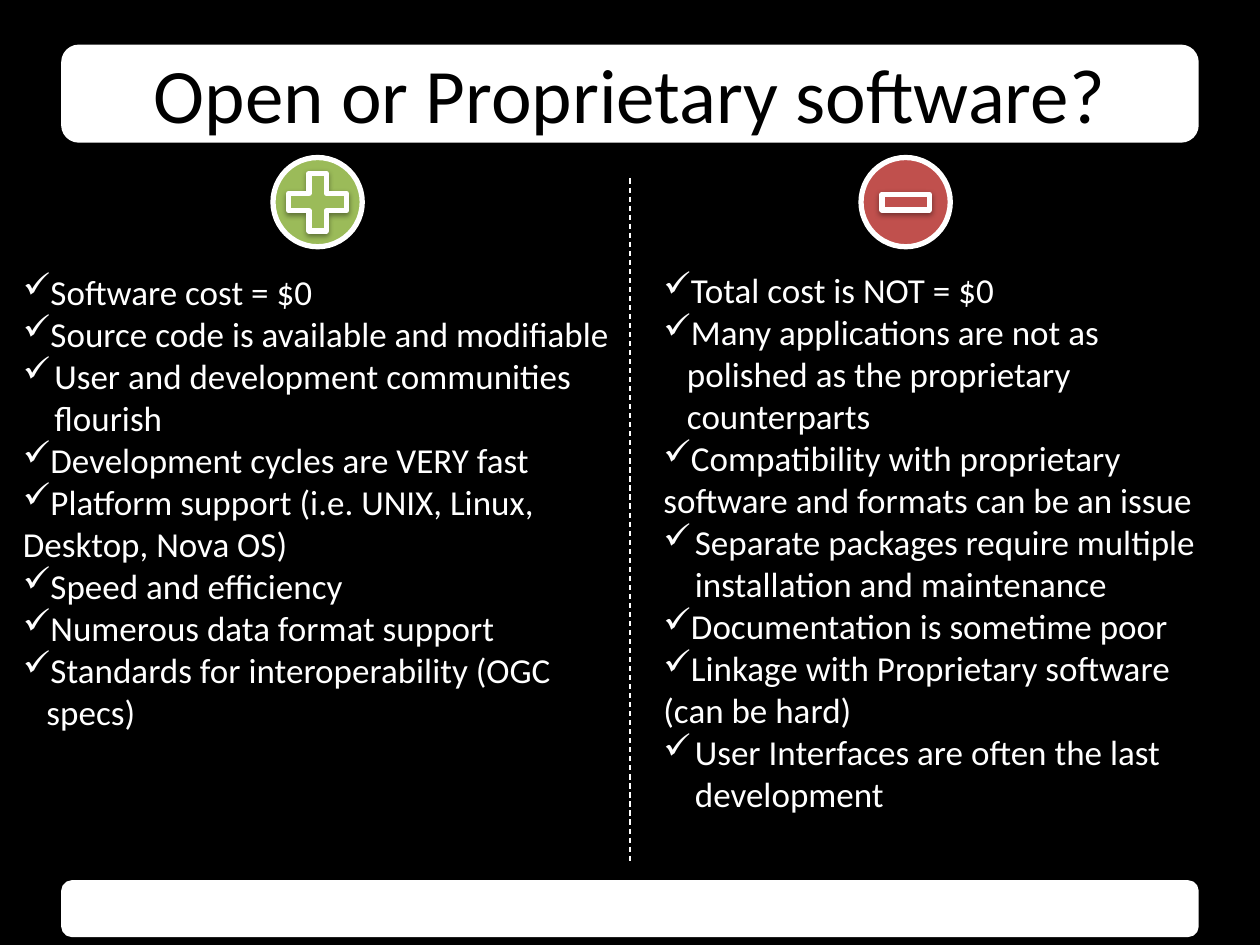
from dataclasses import dataclass

from pptx import Presentation
from pptx.dml.color import RGBColor
from pptx.enum.dml import MSO_LINE
from pptx.enum.shapes import MSO_CONNECTOR, MSO_SHAPE as Preset
from pptx.enum.text import MSO_ANCHOR as Anchor, PP_ALIGN as Align
from pptx.oxml.ns import qn
from pptx.oxml.xmlchemy import OxmlElement as new_element
from pptx.util import Pt


@dataclass(frozen=True)
class Theme:
    font: str = "Calibri"
    title_size: float = 44
    body_size: float = 20
    black: str = "000000"
    white: str = "FFFFFF"
    green: str = "9BBB59"
    red: str = "C0504D"


THEME = Theme()
CHECK = "✓"

# Each item is its lines and the hanging indent of the lines after the first
ADVANTAGES = [
    (["Software cost = $0"], 0),
    (["Source code is available and modifiable"], 0),
    (["User and development communities", "flourish"], 18),
    (["Development cycles are VERY fast"], 0),
    (["Platform support (i.e. UNIX, Linux, Desktop, Nova OS)"], 0),
    (["Speed and efficiency"], 0),
    (["Numerous data format support"], 0),
    (["Standards for interoperability (OGC", "specs)"], 13.5),
]
DRAWBACKS = [
    (["Total cost is NOT = $0"], 0),
    (["Many applications are not as", "polished as the proprietary",
      "counterparts"], 13.5),
    (["Compatibility with proprietary software and formats can be an issue"], 0),
    (["Separate packages require multiple", "installation and maintenance"], 18),
    (["Documentation is sometime poor"], 0),
    (["Linkage with Proprietary software (can be hard)"], 0),
    (["User Interfaces are often the last", "development"], 18),
]


def color(value):
    return RGBColor.from_string(value)


def points(*lengths):
    return [Pt(length) for length in lengths]


def add_child(parent, tag, **attributes):
    child = new_element(tag)
    for name, value in attributes.items():
        child.set(name, str(value))
    parent.append(child)
    return child


def add_panel(shapes, preset, box, fill, line_width):
    shape = shapes.add_shape(preset, *points(*box))
    shape.shadow.inherit = False
    shape.fill.solid()
    shape.fill.fore_color.rgb = color(fill)
    shape.line.color.rgb = color(THEME.white)
    shape.line.width = Pt(line_width)
    return shape


def add_shadow(shape):
    effects = shape._element.spPr.find(qn("a:effectLst"))
    shadow = add_child(effects, "a:outerShdw", blurRad=Pt(3.1), dist=Pt(1.6),
                       dir=90 * 60000, rotWithShape=0)
    shade = add_child(shadow, "a:srgbClr", val=THEME.black)
    add_child(shade, "a:alpha", val=38000)


def add_badge(slide, left, fill, sign, sign_box):
    """A round badge with a plus or minus; sign_box is relative to the badge."""
    group = slide.shapes.add_group_shape()
    top, size = 90, 51
    x, y, width, height = sign_box
    disc = add_panel(group.shapes, Preset.OVAL, (left, top, size, size), fill, 3)
    mark = add_panel(group.shapes, sign, (left + x, top + y, width, height), fill, 3)
    for shape in (disc, mark):
        add_shadow(shape)
    return mark


def set_bullet(paragraph, hanging):
    properties = paragraph._p.get_or_add_pPr()
    properties.set("marL", str(Pt(hanging)))
    properties.set("indent", str(-Pt(hanging)))
    add_child(properties, "a:buChar", char=CHECK)


def add_text(slide, items, box, size, ink, align=Align.LEFT, anchor=Anchor.TOP,
             bullets=False):
    frame = slide.shapes.add_textbox(*points(*box)).text_frame
    frame.word_wrap = True
    frame.vertical_anchor = anchor
    for index, (lines, hanging) in enumerate(items):
        paragraph = frame.paragraphs[0] if index == 0 else frame.add_paragraph()
        paragraph.text = "\v".join(lines)
        paragraph.alignment = align
        if bullets:
            set_bullet(paragraph, hanging)
        for run in paragraph.runs:
            run.font.name = THEME.font
            run.font.size = Pt(size)
            run.font.color.rgb = color(ink)


def add_divider(slide, x, top, bottom):
    divider = slide.shapes.add_connector(
        MSO_CONNECTOR.STRAIGHT, *points(x, top, x, bottom))
    divider.line.color.rgb = color(THEME.white)
    divider.line.width = Pt(0.75)
    divider.line.dash_style = MSO_LINE.DASH
    add_child(divider._element.spPr, "a:effectLst")


def main():
    presentation = Presentation()
    presentation.slide_width, presentation.slide_height = points(720, 540)
    slide = presentation.slides.add_slide(presentation.slide_layouts[6])
    slide.background.fill.solid()
    slide.background.fill.fore_color.rgb = color(THEME.black)

    # Title and footer bars
    for top, height in ((26.5, 54), (504, 30.5)):
        add_panel(slide.shapes, Preset.ROUNDED_RECTANGLE,
                  (36, top, 648, height), THEME.white, 2)
    add_text(slide, [(["Open or Proprietary software?"], 0)], (36, 21.5, 648, 63),
             THEME.title_size, THEME.black, align=Align.CENTER, anchor=Anchor.MIDDLE)

    # Plus and minus badges
    plus = add_badge(slide, 156, THEME.green, Preset.CROSS, (9, 9, 33, 33))
    plus.adjustments[0] = 0.35
    add_badge(slide, 492, THEME.red, Preset.RECTANGLE, (12, 21, 27, 9))

    # Columns of points
    for items, box in ((ADVANTAGES, (6, 151, 354, 274)),
                       (DRAWBACKS, (372, 150, 336, 322))):
        add_text(slide, items, box, THEME.body_size, THEME.white, bullets=True)
    add_divider(slide, 360, 102, 492)

    presentation.save("out.pptx")


if __name__ == "__main__":
    main()
